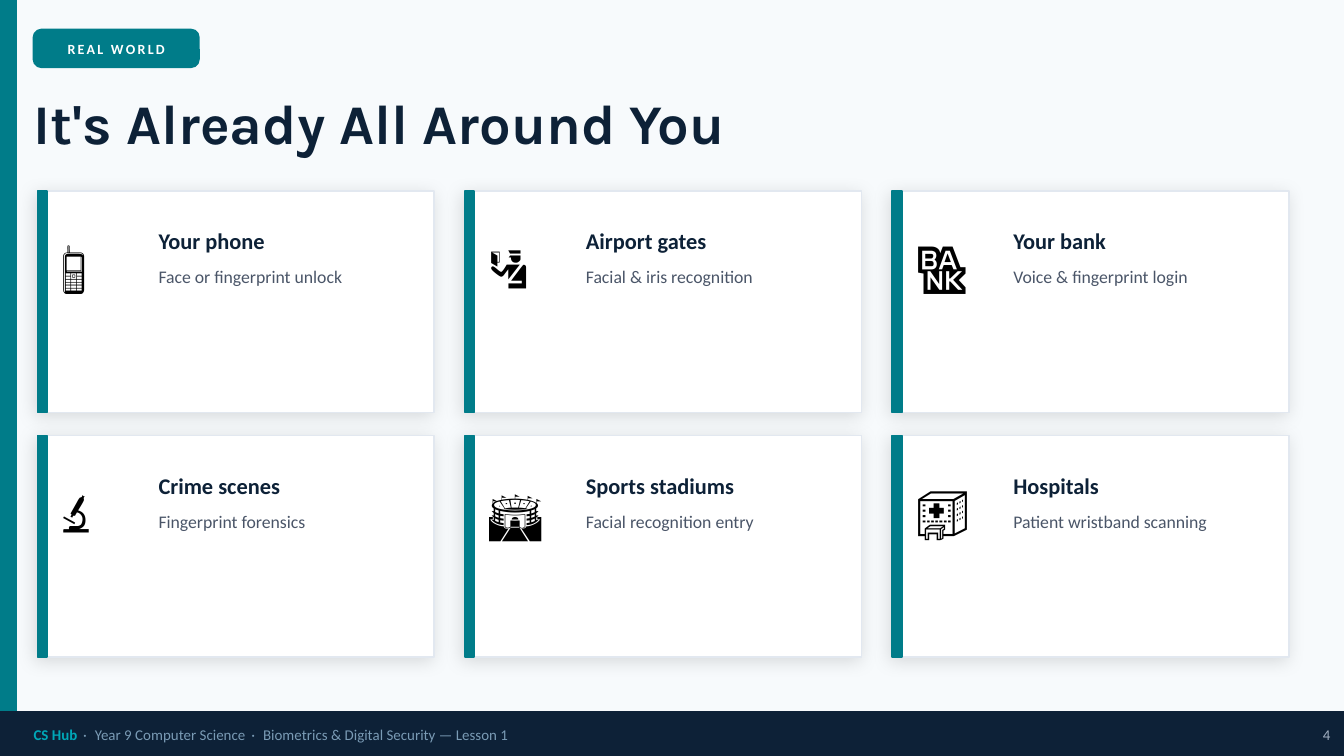
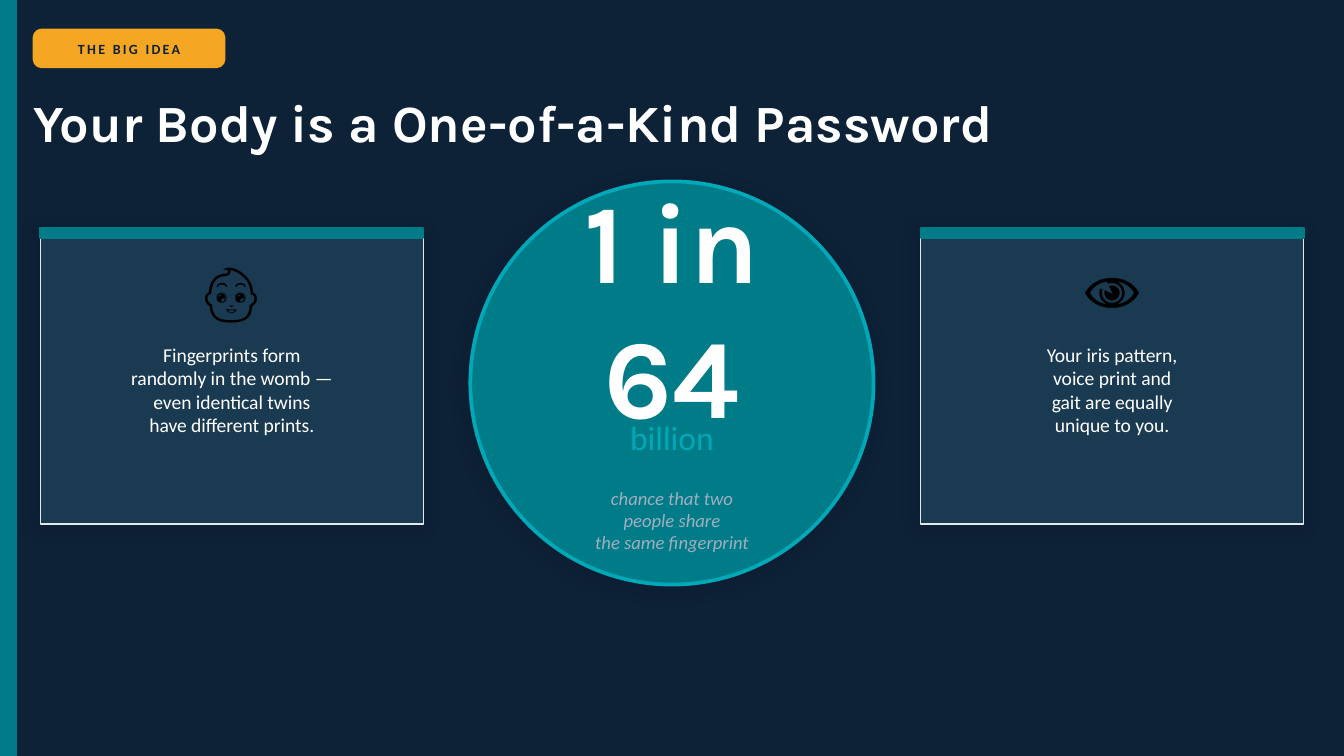
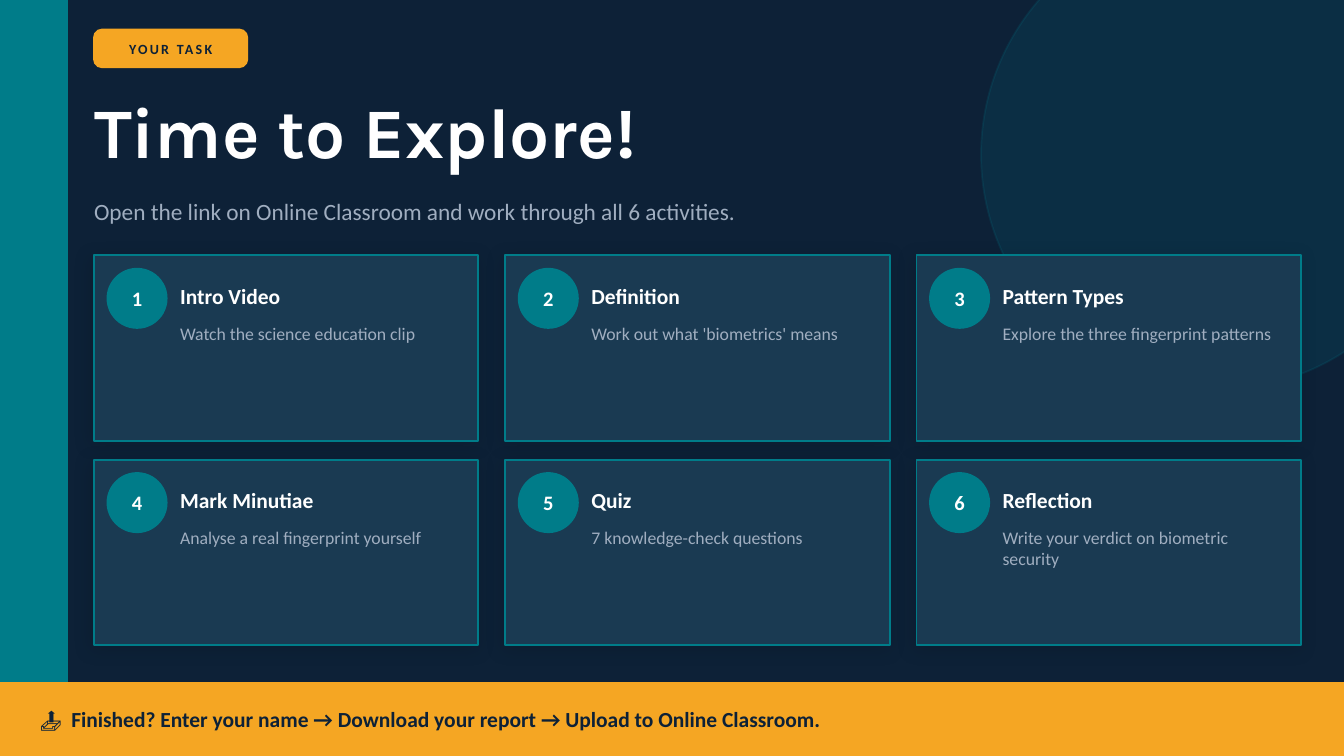
from collections.abc import Iterator
from typing import NamedTuple

from lxml import etree
from pptx import Presentation
from pptx.dml.color import RGBColor
from pptx.enum.shapes import MSO_SHAPE
from pptx.enum.text import MSO_ANCHOR, PP_ALIGN
from pptx.oxml.ns import qn
from pptx.shapes.autoshape import Shape
from pptx.slide import Slide
from pptx.util import Pt

RECT, ROUNDED, OVAL = MSO_SHAPE.RECTANGLE, MSO_SHAPE.ROUNDED_RECTANGLE, MSO_SHAPE.OVAL
TOP, MIDDLE = MSO_ANCHOR.TOP, MSO_ANCHOR.MIDDLE
LEFT, CENTER, RIGHT = PP_ALIGN.LEFT, PP_ALIGN.CENTER, PP_ALIGN.RIGHT

WIDTH, HEIGHT = 720, 405
NAVY, PANEL, PALE, WHITE, BLACK = "0D2137", "1A3A52", "F7FAFC", "FFFFFF", "000000"
TEAL, CYAN, AMBER = "007C89", "00A8B8", "F5A623"
BORDER, MUTED, SLATE, FOOTER_TEXT = "E2E8F0", "A0AEC0", "4A5568", "7A9BB5"
BODY_FONT, TITLE_FONT = "Calibri", "Karla"
MARGIN = 18


class Box(NamedTuple):
    x: float
    y: float
    w: float
    h: float

    def inner(self, dx: float, dy: float, w: float, h: float) -> "Box":
        """Return a box placed relative to this one's top left corner."""
        return Box(self.x + dx, self.y + dy, w, h)


class Run(NamedTuple):
    """A piece of text; None keeps the format of the whole text box."""
    text: str
    color: str | None = None
    bold: bool | None = None
    spacing: float | None = None


class Place(NamedTuple):
    icon: str
    name: str
    use: str


class Fact(NamedTuple):
    x: float
    icon: str
    text: str


class Activity(NamedTuple):
    name: str
    task: str


PLACES = [
    Place("📱", "Your phone", "Face or fingerprint unlock"),
    Place("🛂", "Airport gates", "Facial & iris recognition"),
    Place("🏦", "Your bank", "Voice & fingerprint login"),
    Place("🔬", "Crime scenes", "Fingerprint forensics"),
    Place("🏟️", "Sports stadiums", "Facial recognition entry"),
    Place("🏥", "Hospitals", "Patient wristband scanning"),
]
FACTS = [
    Fact(21.6, "👶", "Fingerprints form\nrandomly in the womb —\n"
                     "even identical twins\nhave different prints."),
    Fact(493.2, "👁️", "Your iris pattern,\nvoice print and\n"
                       "gait are equally\nunique to you."),
]
ACTIVITIES = [
    Activity("Intro Video", "Watch the science education clip"),
    Activity("Definition", "Work out what 'biometrics' means"),
    Activity("Pattern Types", "Explore the three fingerprint patterns"),
    Activity("Mark Minutiae", "Analyse a real fingerprint yourself"),
    Activity("Quiz", "7 knowledge-check questions"),
    Activity("Reflection", "Write your verdict on biometric security"),
]


def rgb(color: str) -> RGBColor:
    return RGBColor.from_string(color)


def points(box: Box) -> list[Pt]:
    return [Pt(v) for v in box]


def grid(first: Box, gap_x: float, gap_y: float, columns: int = 3,
         rows: int = 2) -> Iterator[Box]:
    """Yield equal boxes row by row, starting from the top left one."""
    for row in range(rows):
        for col in range(columns):
            yield first.inner(col * (first.w + gap_x), row * (first.h + gap_y),
                              first.w, first.h)


def add_shadow(sp: Shape) -> None:
    effects = sp._element.spPr.find(qn("a:effectLst"))
    shadow = etree.SubElement(effects, qn("a:outerShdw"), blurRad=str(Pt(10)),
                              dist=str(Pt(2)), dir=str(135 * 60000),
                              algn="bl", rotWithShape="0")
    color = etree.SubElement(shadow, qn("a:srgbClr"), val=BLACK)
    etree.SubElement(color, qn("a:alpha"), val="12000")


def add_box(s: Slide, kind: MSO_SHAPE, box: Box, fill: str, *, line: str | None = None,
            line_width: float = 1, shadow: bool = False,
            opacity: int | None = None) -> Shape:
    """Draw a filled shape, outlined in its fill colour unless line is given."""
    sp = s.shapes.add_shape(kind, *points(box))
    sp.shadow.inherit = False
    sp.fill.solid()
    sp.fill.fore_color.rgb = rgb(fill)
    sp.line.color.rgb = rgb(line or fill)
    sp.line.width = Pt(line_width)
    if shadow:
        add_shadow(sp)
    if opacity is not None:
        for color in sp._element.spPr.iter(qn("a:srgbClr")):
            etree.SubElement(color, qn("a:alpha"), val=str(opacity * 1000))
    return sp


def add_text(s: Slide, box: Box, text: str | list[Run], *, size: float, color: str,
             font: str = BODY_FONT, bold: bool = False, italic: bool = False,
             spacing: float = 0, align: PP_ALIGN = LEFT,
             anchor: MSO_ANCHOR = MIDDLE) -> None:
    """Write one paragraph per line of a string, or one paragraph of runs."""
    tf = s.shapes.add_textbox(*points(box)).text_frame
    tf.word_wrap = True
    tf.vertical_anchor = anchor
    tf.margin_left = tf.margin_right = tf.margin_top = tf.margin_bottom = 0
    lines = [[Run(t)] for t in text.split("\n")] if isinstance(text, str) else [text]
    for i, line in enumerate(lines):
        p = tf.add_paragraph() if i else tf.paragraphs[0]
        p.alignment = align
        for part in line:
            r = p.add_run()
            r.text = part.text
            r.font.name = font
            r.font.size = Pt(size)
            r.font.bold = bold if part.bold is None else part.bold
            r.font.italic = italic
            r.font.color.rgb = rgb(part.color or color)
            tracking = spacing if part.spacing is None else part.spacing
            if tracking:
                r._r.get_or_add_rPr().set("spc", str(round(tracking * 100)))


def add_slide(prs: Presentation, background: str, band_width: float = 8.64) -> Slide:
    """Add a blank slide with its background and the teal band on the left."""
    s = prs.slides.add_slide(prs.slide_layouts[6])
    s.background.fill.solid()
    s.background.fill.fore_color.rgb = rgb(background)
    add_box(s, RECT, Box(0, 0, band_width, HEIGHT), TEAL)
    return s


def add_heading(s: Slide, tag: str, tag_width: float, title: str, *, title_size: float,
                x: float = MARGIN, title_width: float = 684, title_height: float = 46.8,
                tag_fill: str = AMBER, tag_color: str = NAVY,
                color: str = WHITE) -> None:
    tag_box = Box(x, 15.84, tag_width, 20.16)
    sp = add_box(s, ROUNDED, tag_box, tag_fill)
    sp.adjustments[0] = 0.21
    add_text(s, tag_box, tag, size=7.5, color=tag_color, bold=True, spacing=1.2,
             align=CENTER)
    add_text(s, Box(x, 41.76, title_width, title_height), title, size=title_size,
             color=color, font=TITLE_FONT, bold=True)


def add_footer(s: Slide, number: int) -> None:
    bar = Box(0, 381.6, WIDTH, 23.4)
    dot = Run(" · ", spacing=1.2)
    add_box(s, RECT, bar, NAVY)
    add_text(s, bar.inner(MARGIN, 0, 612, bar.h),
             [Run("CS Hub", CYAN, True), dot, Run("Year 9 Computer Science"), dot,
              Run("Biometrics & Digital Security — Lesson 1")],
             size=8, color=FOOTER_TEXT)
    add_text(s, bar.inner(684, 0, 28.8, bar.h), str(number), size=8, color=MUTED,
             align=RIGHT)


def add_place_card(s: Slide, card: Box, place: Place) -> None:
    add_box(s, RECT, card, WHITE, line=BORDER, line_width=0.75, shadow=True)
    add_box(s, RECT, card._replace(w=5.04), TEAL)
    add_text(s, card.inner(12.96, 14.4, 50.4, 50.4), place.icon, size=28, color=BLACK)
    add_text(s, card.inner(64.8, 12.96, 138.96, 27.36), place.name, size=12,
             color=NAVY, bold=True)
    add_text(s, card.inner(64.8, 40.32, 138.96, 57.6), place.use, size=9.5,
             color=SLATE, anchor=TOP)


def add_fact_card(s: Slide, fact: Fact) -> None:
    card = Box(fact.x, 122.4, 205.2, 158.4)
    add_box(s, RECT, card, PANEL, line=BORDER, line_width=0.75, shadow=True)
    add_box(s, RECT, card._replace(h=5.04), TEAL)
    add_text(s, card.inner(0, 7.2, card.w, 50.4), fact.icon, size=30, color=BLACK,
             align=CENTER)
    add_text(s, card.inner(10.8, 61.2, card.w - 21.6, 90), fact.text, size=10.5,
             color=WHITE, align=CENTER, anchor=TOP)


def add_activity_card(s: Slide, card: Box, number: int, activity: Activity) -> None:
    badge = card.inner(7.2, 7.2, 31.68, 31.68)
    add_box(s, RECT, card, PANEL, line=TEAL, shadow=True)
    add_box(s, OVAL, badge, TEAL)
    add_text(s, badge, str(number), size=11, color=WHITE, bold=True, align=CENTER)
    add_text(s, card.inner(46.08, 7.2, 152.64, 28.8), activity.name, size=11.5,
             color=WHITE, bold=True)
    add_text(s, card.inner(46.08, 36, 152.64, 36), activity.task, size=9.5,
             color=MUTED, anchor=TOP)


def build_places(prs: Presentation) -> None:
    s = add_slide(prs, PALE)
    add_footer(s, 4)
    add_heading(s, "REAL WORLD", 88.56, "It's Already All Around You", title_size=30,
                tag_fill=TEAL, tag_color=WHITE, color=NAVY)
    cards = grid(Box(20.16, 102.24, 212.4, 118.8), 16.56, 12.24)
    for card, place in zip(cards, PLACES):
        add_place_card(s, card, place)


def build_big_idea(prs: Presentation) -> None:
    s = add_slide(prs, NAVY)
    add_heading(s, "THE BIG IDEA", 102.24, "Your Body is a One-of-a-Kind Password",
                title_size=28)
    circle = Box(252, 97.2, 216, 216)
    add_box(s, OVAL, circle, TEAL, line=CYAN, line_width=2, shadow=True)
    add_text(s, circle.inner(0, 9.36, circle.w, 115.2), "1 in\n64", size=60,
             color=WHITE, font=TITLE_FONT, bold=True, align=CENTER)
    add_text(s, circle.inner(0, 118.8, circle.w, 36), "billion", size=18, color=CYAN,
             align=CENTER)
    add_text(s, circle.inner(0, 156.24, circle.w, 50.4),
             "chance that two\npeople share\nthe same fingerprint", size=10,
             color=MUTED, italic=True, align=CENTER)
    for fact in FACTS:
        add_fact_card(s, fact)


def build_task(prs: Presentation) -> None:
    left = 50.4
    s = add_slide(prs, NAVY, band_width=36)
    add_box(s, OVAL, Box(525.6, -43.2, 252, 252), CYAN, opacity=10)
    add_heading(s, "YOUR TASK", 82.08, "Time to Explore!", title_size=38, x=left,
                title_width=612, title_height=56.16)
    add_text(s, Box(left, 99.36, 612, 27.36),
             "Open the link on Online Classroom and work through all 6 activities.",
             size=12.5, color=MUTED)
    cards = grid(Box(left, 136.8, 205.92, 99.36), 14.4, 10.08)
    for number, (card, activity) in enumerate(zip(cards, ACTIVITIES), 1):
        add_activity_card(s, card, number, activity)
    banner = Box(0, 365.76, WIDTH, 39.24)
    add_box(s, RECT, banner, AMBER)
    add_text(s, banner.inner(21.6, 0, 676.8, banner.h),
             [Run("📤 ", spacing=1.3),
              Run("Finished? Enter your name → Download your report → "
                  "Upload to Online Classroom.")],
             size=11.5, color=NAVY, bold=True)


def main() -> None:
    prs = Presentation()
    prs.slide_width, prs.slide_height = Pt(WIDTH), Pt(HEIGHT)
    build_places(prs)
    build_big_idea(prs)
    build_task(prs)
    prs.save("out.pptx")


if __name__ == "__main__":
    main()
